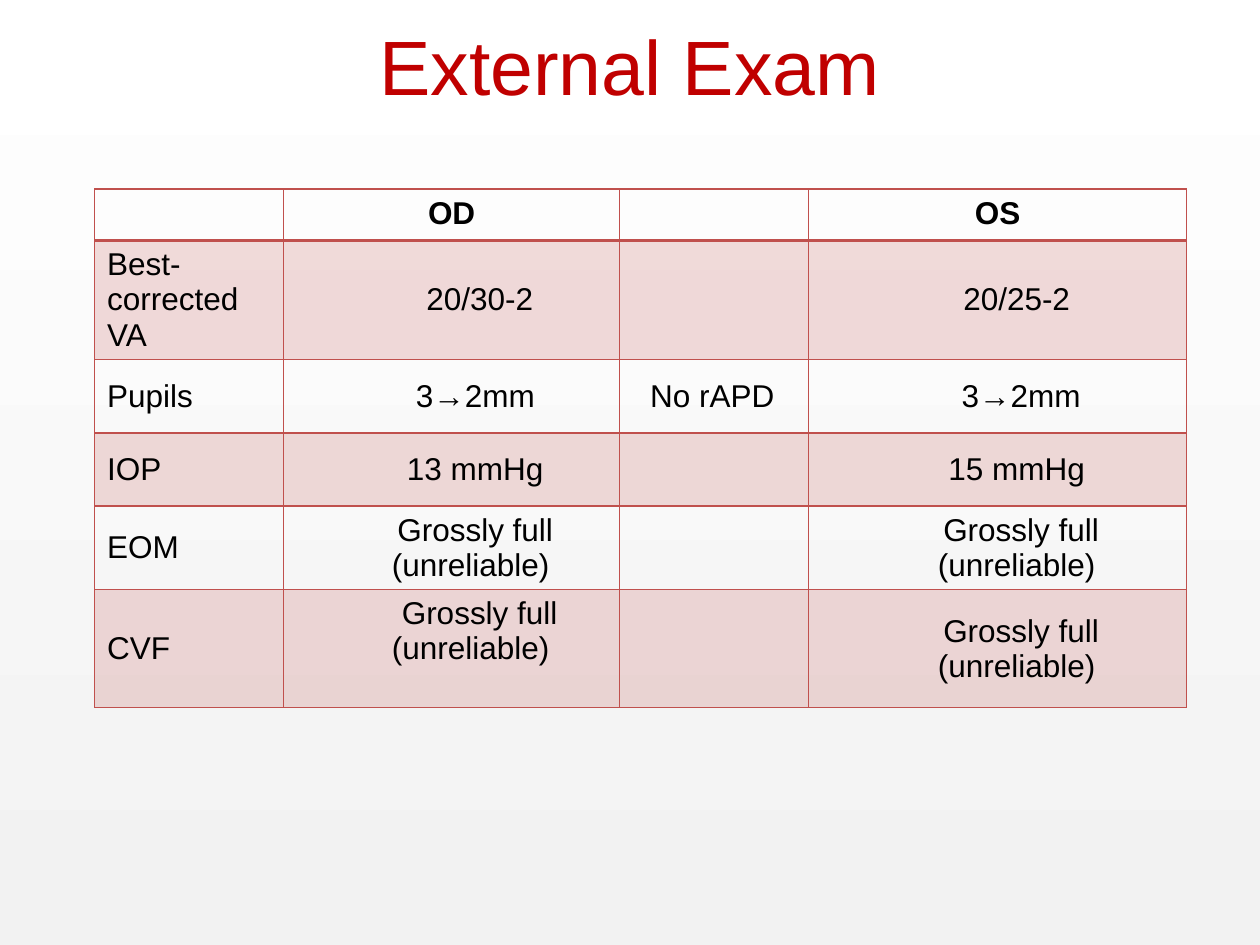
from lxml import etree
from pptx import Presentation
from pptx.dml.color import RGBColor
from pptx.enum.shapes import MSO_SHAPE
from pptx.enum.text import MSO_ANCHOR, PP_ALIGN
from pptx.oxml.ns import qn
from pptx.util import Cm, Pt

RECT = MSO_SHAPE.RECTANGLE
TOP, MIDDLE = MSO_ANCHOR.TOP, MSO_ANCHOR.MIDDLE
LEFT, CENTER = PP_ALIGN.LEFT, PP_ALIGN.CENTER

FONT = "Arial"
COLORS = {
    "title": "C00000",
    "text": "000000",
    "accent": "C0504D",
    "page_top": "FFFFFF",
    "page_bottom": "F2F2F2",
}
COL_WIDTHS = [3.81, 6.77, 3.81, 7.62]
ROW_HEIGHTS = [1.04, 2.38, 1.48, 1.48, 1.67, 2.38]
INSET_X, INSET_Y, INSET_VALUE = 0.25, 0.13, 1.02
SPACE = 0.18

GROSSLY_FULL = "Grossly full (unreliable)"
ROWS = [
    ["", "OD", "", "OS"],
    ["Best-corrected VA", "20/30-2", "", "20/25-2"],
    ["Pupils", "3→2mm", "No rAPD", "3→2mm"],
    ["IOP", "13 mmHg", "", "15 mmHg"],
    ["EOM", GROSSLY_FULL, "", GROSSLY_FULL],
    ["CVF", GROSSLY_FULL, "", GROSSLY_FULL],
]
INDENTS = {
    (1, 1): 2, (2, 1): 1, (2, 2): 1, (2, 3): 1, (3, 1): 1,
    (4, 1): 1, (4, 3): 1, (5, 1): 2, (5, 3): 1,
}


def rgb(name):
    return RGBColor.from_string(COLORS[name])


def style_text(p, size, color, align, bold=False):
    p.alignment = align
    p.font.size = Pt(size)
    for r in p.runs:
        r.font.name = FONT
        r.font.size = Pt(size)
        r.font.bold = bold
        r.font.color.rgb = rgb(color)


def add_background(slide, x, y, w, h):
    sp = slide.shapes.add_shape(RECT, x, y, w, h)
    sp.shadow.inherit = False
    sp.line.fill.background()
    sp.fill.gradient()
    sp.fill.gradient_angle = 90
    for stop, name, pos in zip(sp.fill.gradient_stops,
                               ["page_bottom", "page_top"], [0, 1]):
        stop.color.rgb = rgb(name)
        stop.position = pos


def add_title(slide, x, y, w, h, text):
    tf = slide.shapes.add_textbox(x, y, w, h).text_frame
    tf.word_wrap = True
    tf.vertical_anchor = MIDDLE
    tf.text = text
    style_text(tf.paragraphs[0], 44, "title", CENTER)


def set_borders(cell, widths):
    tc_pr = cell._tc.get_or_add_tcPr()
    for i, (side, width) in enumerate(widths.items()):
        ln = etree.Element(qn(f"a:ln{side}"), w=str(Pt(width)))
        fill = etree.SubElement(ln, qn("a:solidFill"))
        etree.SubElement(fill, qn("a:srgbClr"), val=COLORS["accent"])
        tc_pr.insert(i, ln)


def fill_cell(cell, banded):
    if not banded:
        cell.fill.background()
        return
    cell.fill.solid()
    cell.fill.fore_color.rgb = rgb("accent")
    color = cell._tc.tcPr.find(qn("a:solidFill")).find(qn("a:srgbClr"))
    etree.SubElement(color, qn("a:alpha"), val="20000")


def add_exam_table(slide, x, y, w, h):
    table = slide.shapes.add_table(len(ROWS), len(COL_WIDTHS), x, y, w, h).table
    for col, width in zip(table.columns, COL_WIDTHS):
        col.width = Cm(width)
    for row, height in zip(table.rows, ROW_HEIGHTS):
        row.height = Cm(height)
    for i, texts in enumerate(ROWS):
        for j, text in enumerate(texts):
            cell = table.cell(i, j)
            cell.text = text
            header, label = i == 0, j == 0
            cell.vertical_anchor = TOP if header else MIDDLE
            cell.margin_left = Cm(INSET_X)
            cell.margin_right = Cm(INSET_X)
            cell.margin_top = cell.margin_bottom = Cm(INSET_Y)
            if text and not header and not label:
                cell.margin_left = Cm(0 if j == 2 else INSET_VALUE)
            p = cell.text_frame.paragraphs[0]
            if (i, j) in INDENTS:
                indent = Cm(SPACE * INDENTS[i, j])
                p._p.get_or_add_pPr().set("indent", str(indent))
            style_text(p, 18, "text", LEFT if label else CENTER, header)
            fill_cell(cell, i % 2 == 1)
            set_borders(cell, {"L": 1, "R": 1, "T": 2 if i == 1 else 1,
                               "B": 2 if header else 1})
    raised = table.cell(5, 1)
    raised.vertical_anchor = TOP


def main():
    prs = Presentation()
    prs.slide_width, prs.slide_height = Cm(25.4), Cm(19.05)
    slide = prs.slides.add_slide(prs.slide_layouts[6])
    add_background(slide, 0, 0, prs.slide_width, prs.slide_height)
    add_exam_table(slide, Cm(1.91), Cm(3.81),
                   Cm(sum(COL_WIDTHS)), Cm(sum(ROW_HEIGHTS)))
    add_title(slide, Cm(1.27), Cm(-0.28), Cm(22.86), Cm(3.18), "External Exam")
    prs.save("out.pptx")


if __name__ == "__main__":
    main()
